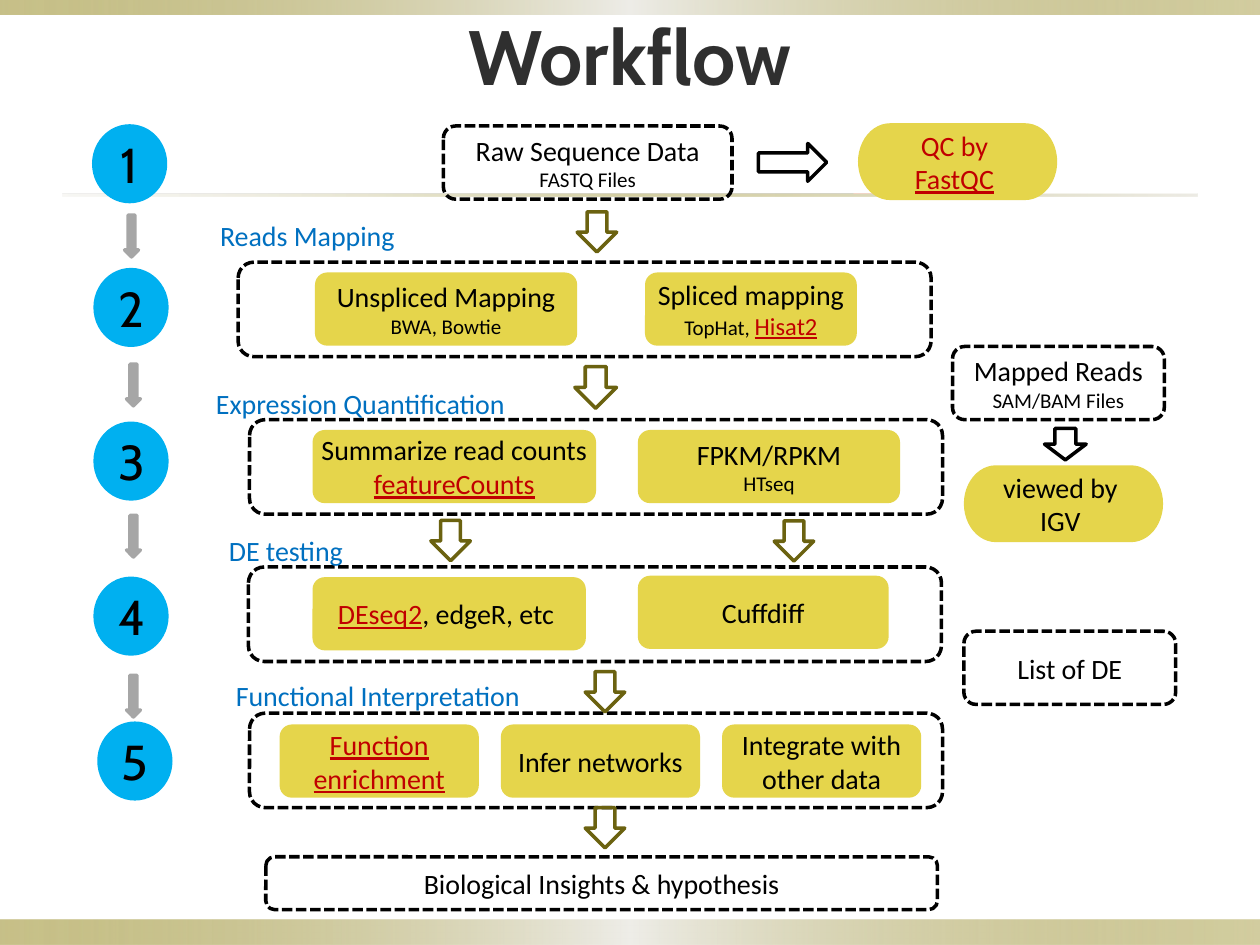
from copy import deepcopy

from lxml.etree import SubElement
from pptx import Presentation
from pptx.dml.color import RGBColor
from pptx.enum.dml import MSO_LINE as Dash
from pptx.enum.shapes import MSO_SHAPE as Form
from pptx.enum.text import MSO_ANCHOR as Anchor, PP_ALIGN as Align
from pptx.oxml.ns import qn
from pptx.util import Pt

COLORS = {
    "black": "000000", "title": "2F2F2F", "yellow": "E5D54B", "red": "C00000",
    "label": "0070C0", "olive": "6B6210", "step": "00B0F0", "gray": "A6A6A6",
    "band": "918415", "pale": "EEEDE8", "rule": "DCD9CC",
}
RED = {"color": "red"}
PICK = {"color": "red", "underline": True}
SMALL = {"size": 12}


def rgb(name):
    return RGBColor.from_string(COLORS[name])


def write(frame, paragraphs, font="Calibri", size=16, color="black", bold=False, inset=None):
    frame.word_wrap = True
    frame.vertical_anchor = Anchor.MIDDLE
    if inset is not None:
        frame.margin_left = frame.margin_right = Pt(inset)
        frame.margin_top = frame.margin_bottom = Pt(inset)
    for index, runs in enumerate(paragraphs):
        paragraph = frame.paragraphs[0] if index == 0 else frame.add_paragraph()
        paragraph.alignment = Align.CENTER
        for text, changes in runs:
            run = paragraph.add_run()
            run.text = text
            run.font.name = font
            run.font.bold = bold
            run.font.size = Pt(changes.get("size", size))
            run.font.color.rgb = rgb(changes.get("color", color))
            run.font.underline = changes.get("underline", False)


class Workflow:
    """Draws workflow elements on one slide in a shared style."""

    def __init__(self, slide):
        self.slide = slide
        self.line_width = Pt(2)

    def shape(self, form, box, fill=None, line=None, dashed=False):
        shape = self.slide.shapes.add_shape(form, *map(Pt, box))
        shape.shadow.inherit = False
        if fill:
            shape.fill.solid()
            shape.fill.fore_color.rgb = rgb(fill)
        else:
            shape.fill.background()
        if line:
            shape.line.color.rgb = rgb(line)
            shape.line.width = self.line_width
            if dashed:
                shape.line.dash_style = Dash.SQUARE_DOT
        else:
            shape.line.fill.background()
        return shape

    def band(self, box, stops):
        shape = self.shape(Form.RECTANGLE, box)
        shape.fill.gradient()
        shape.fill.gradient_angle = 0
        stop_list = shape.element.spPr.find(".//" + qn("a:gsLst"))
        stop_list.insert(1, deepcopy(stop_list[0]))
        for stop, position, (color, opacity) in zip(shape.fill.gradient_stops, (0, 0.5, 1), stops):
            stop.position = position
            stop.color.rgb = rgb(color)
        for element, (color, opacity) in zip(stop_list, stops):
            SubElement(element[0], qn("a:alpha")).set("val", str(opacity * 1000))

    def title(self, text, box):
        frame = self.slide.shapes.add_textbox(*map(Pt, box)).text_frame
        write(frame, [[(text, {})]], font="Cabin", size=44, color="title", bold=True)

    def dashed(self, box, *paragraphs, inset=0):
        shape = self.shape(Form.ROUNDED_RECTANGLE, box, line="black", dashed=True)
        write(shape.text_frame, paragraphs, inset=inset)

    def method(self, box, *paragraphs):
        shape = self.shape(Form.ROUNDED_RECTANGLE, box, fill="yellow")
        write(shape.text_frame, paragraphs, inset=0)

    def label(self, text, box):
        shape = self.shape(Form.ROUNDED_RECTANGLE, box)
        write(shape.text_frame, [[(text, {})]], color="label", inset=0)

    def check(self, box, *paragraphs):
        shape = self.shape(Form.FLOWCHART_TERMINATOR, box, fill="yellow")
        write(shape.text_frame, paragraphs)

    def step(self, number, left, top):
        shape = self.shape(Form.OVAL, (left, top, 41, 43.2), fill="step", line="step")
        write(shape.text_frame, [[(str(number), {})]], font="Cabin", size=28)

    def arrow(self, box, line="olive", fill=None, form=Form.DOWN_ARROW):
        self.shape(form, box, fill=fill, line=line)


def main():
    presentation = Presentation()
    presentation.slide_width, presentation.slide_height = Pt(720), Pt(540)
    slide = presentation.slides.add_slide(presentation.slide_layouts[6])
    flow = Workflow(slide)

    edge = (("band", 50), ("pale", 100), ("band", 40))
    flow.band((0, 525.6, 720, 14.4), edge)
    flow.band((0, 0, 720, 8.6), edge)
    flow.band((36, 110.9, 648, 1.4), (("rule", 20), ("band", 40), ("rule", 50)))
    flow.title("Workflow", (36, -13.7, 648, 90))

    for left, top in ((136.1, 149.8), (142.6, 239.8), (142, 324), (142.6, 407.5)):
        flow.dashed((left, top, 396, 54))
    for text, left, top, width in (
        ("Reads Mapping", 76.3, 113.8, 198.7),
        ("Expression Quantification", 106.6, 209.5, 198.7),
        ("DE testing", 112.3, 293.8, 102.2),
        ("Functional Interpretation", 116.6, 376.6, 198.7),
    ):
        flow.label(text, (left, top, width, 41.8))

    flow.dashed((253.4, 72, 164.9, 41.8), [("Raw Sequence Data", {})], [("FASTQ Files", SMALL)])
    flow.dashed((544.3, 198, 121, 41.8), [("Mapped Reads", {})], [("SAM/BAM Files", SMALL)])
    flow.dashed((550.8, 360.7, 121, 41.8), [("List of DE", {})])
    flow.dashed((151.9, 489.6, 383.8, 30.2),
                [("Biological Insights & hypothesis", {})], inset=None)

    flow.method((180, 155.7, 149.8, 41.8), [("Unspliced Mapping", {})], [("BWA, Bowtie", SMALL)])
    flow.method((368.6, 155.7, 121, 41.8), [("Spliced mapping", {})],
                [("TopHat, ", SMALL), ("Hisat2", {**PICK, "size": 14})])
    flow.method((178.6, 245.7, 162, 41.8), [("Summarize read counts", {})],
                [("featureCounts", PICK)])
    flow.method((364.5, 245.7, 149.8, 41.8), [("FPKM/RPKM", {})], [("HTseq", SMALL)])
    flow.method((178.6, 329.8, 156.2, 41.8), [("DEseq2", PICK), (", edgeR, etc ", {})])
    flow.method((364.5, 329, 143.3, 41.8), [("Cuffdiff", {})])
    goals = (("Function enrichment", PICK), ("Infer networks", {}),
             ("Integrate with other data", {}))
    for index, goal in enumerate(goals):
        flow.method((159.8 + 126.4 * index, 414, 113.8, 41.8), [goal])

    flow.check((490.3, 70.4, 113.8, 43.9), [("QC by ", RED)], [("FastQC", PICK), (" ", RED)])
    flow.check((550.8, 265.9, 113.8, 43.9), [("viewed by ", {})], [("IGV ", {})])

    for left, top in ((329.8, 121), (246.2, 297.4), (442.4, 297.6), (334.4, 383.8), (334.4, 461.5)):
        flow.arrow((left, top, 22.6, 23))
    flow.arrow((328.5, 209.5, 23.8, 23.8))
    flow.arrow((596.9, 244.8, 23.8, 18), line="black")
    flow.arrow((433.4, 82, 39, 21.6), line="black", form=Form.RIGHT_ARROW)

    steps = ((53.6, 72), (54.4, 154.1), (54.4, 241.9), (54.4, 330.5), (56.6, 413.3))
    for number, (left, top) in enumerate(steps, 1):
        flow.step(number, left, top)
    for left, top in ((71.2, 123), (72.3, 208.1), (72.3, 294.5), (72.3, 385.9)):
        flow.arrow((left, top, 7.9, 23.8), line="gray", fill="gray")

    presentation.save("out.pptx")


if __name__ == "__main__":
    main()
